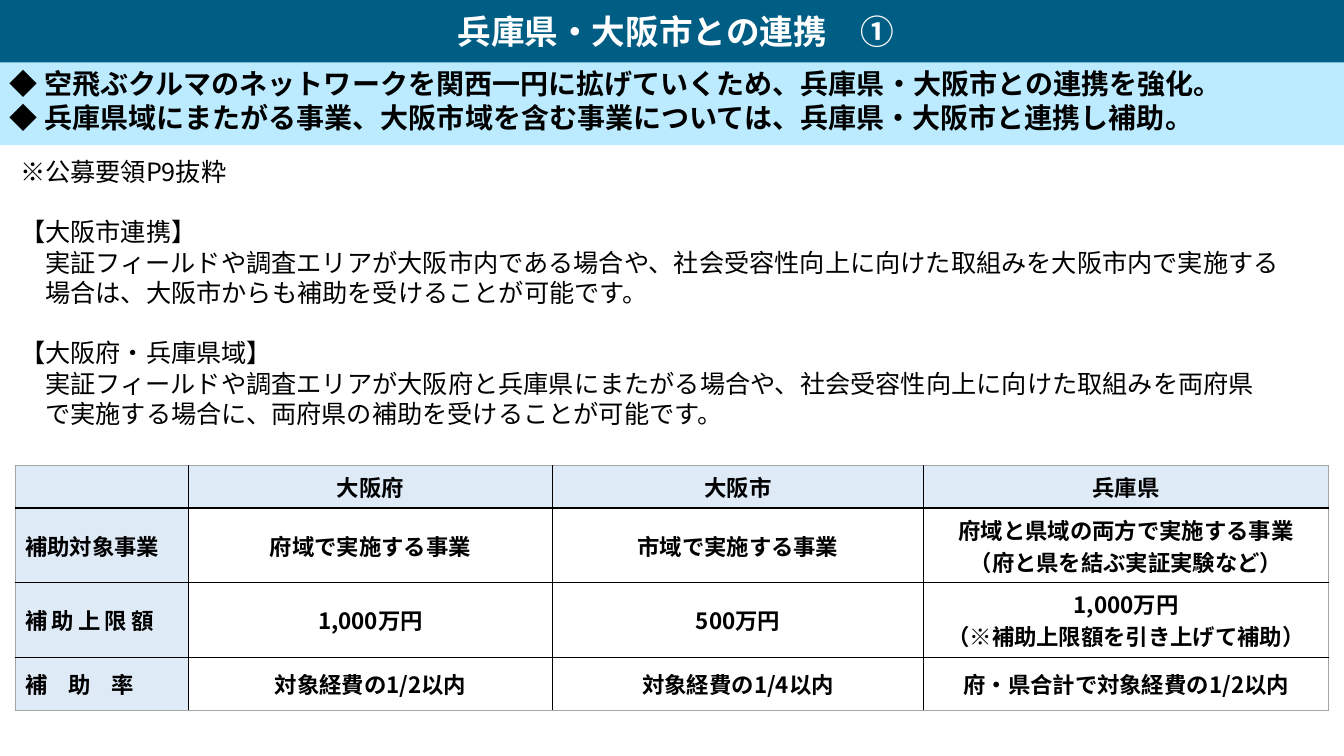
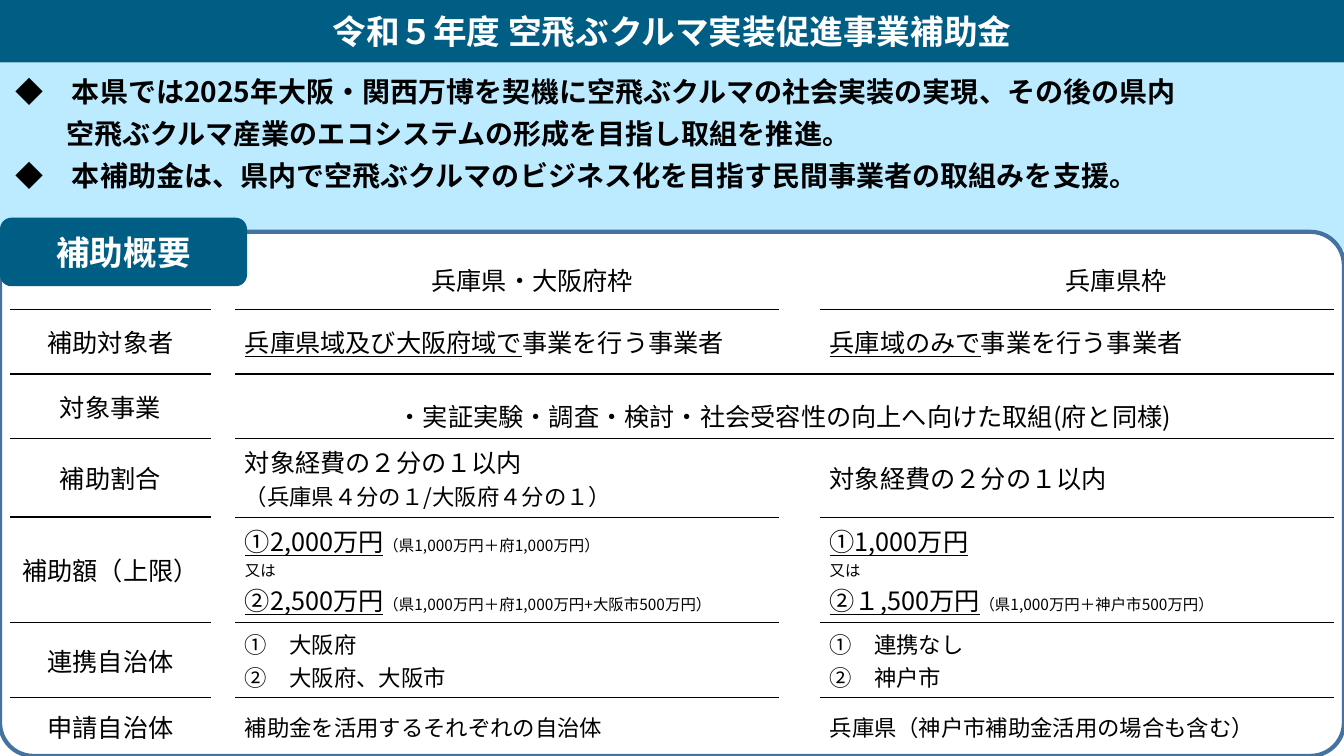
import dataclasses

import lxml.etree
import pptx
import pptx.dml.color
import pptx.enum.shapes
import pptx.enum.text
import pptx.oxml.ns
import pptx.util

Inches = pptx.util.Inches
Pt = pptx.util.Pt
SHAPE = pptx.enum.shapes.MSO_SHAPE
ALIGN = pptx.enum.text.PP_ALIGN
ANCHOR = pptx.enum.text.MSO_ANCHOR
qn = pptx.oxml.ns.qn


@dataclasses.dataclass(frozen=True)
class Theme:
    font: str = "Noto Sans CJK JP"
    navy: str = "005D84"
    sky: str = "BCEBFF"
    pale: str = "DEEBF7"
    frame: str = "43739E"
    edge: str = "A6A6A6"
    black: str = "000000"
    white: str = "FFFFFF"
    title: int = 24
    lead: int = 20
    body: int = 18
    small: int = 16
    note: int = 11
    width: float = 13.33
    height: float = 7.5
    title_height: float = 0.62


T = Theme()
PLAIN_TABLE = "{2D5ABB26-0587-4C30-8999-92F81FD0307C}"


# Text
def rgb(value):
    return pptx.dml.color.RGBColor.from_string(value)


def add_run(paragraph, text, size, color=T.black, bold=False, underline=False, spacing=0):
    run = paragraph.add_run()
    run.text = text
    font = run.font
    font.name, font.size, font.bold = T.font, Pt(size), bold
    font.underline = underline
    font.color.rgb = rgb(color)
    properties = run._r.get_or_add_rPr()
    latin = properties.find(qn("a:latin"))
    east_asian = lxml.etree.Element(qn("a:ea"), typeface=T.font)
    latin.addnext(east_asian)
    if spacing:
        properties.set("spc", str(spacing * 100))


def write(frame, paragraphs, align=ALIGN.LEFT, indents=(), **style):
    """Each paragraph is a list of runs: a string, or a string with style changes."""
    for index, runs in enumerate(paragraphs):
        paragraph = frame.paragraphs[0] if index == 0 else frame.add_paragraph()
        paragraph.alignment = align
        if index < len(indents) and indents[index]:
            paragraph._p.get_or_add_pPr().set("marL", str(Inches(indents[index])))
        for run in runs:
            text, changes = (run, {}) if isinstance(run, str) else run
            add_run(paragraph, text, **{**style, **changes})
    return frame.paragraphs


def set_insets(frame, left, top, right, bottom):
    frame.margin_left, frame.margin_top = Inches(left), Inches(top)
    frame.margin_right, frame.margin_bottom = Inches(right), Inches(bottom)


# Shapes shared by the slides
def add_panel(slide, box, fill, kind=SHAPE.RECTANGLE, line=None):
    panel = slide.shapes.add_shape(kind, *map(Inches, box))
    panel.shadow.inherit = False
    panel.fill.solid()
    panel.fill.fore_color.rgb = rgb(fill)
    if line:
        panel.line.color.rgb, panel.line.width = rgb(line), Pt(3)
    else:
        panel.line.fill.background()
    panel.text_frame.word_wrap = True
    return panel


def add_heading(slide, box, text, kind=SHAPE.RECTANGLE):
    frame = add_panel(slide, box, T.navy, kind).text_frame
    set_insets(frame, 0, 0, 0, 0)
    frame.vertical_anchor = ANCHOR.MIDDLE
    write(frame, [[text]], ALIGN.CENTER, size=T.title, color=T.white, bold=True)


def add_header(slide, title, band_top, band_height, messages, indents=(), top_inset=0.05, gap=0):
    band = add_panel(slide, (0, band_top, T.width, band_height), T.sky).text_frame
    set_insets(band, 0.1, top_inset, 0.1, 0.05)
    band.vertical_anchor = ANCHOR.TOP
    for paragraph in write(band, messages, indents=indents, size=T.lead, bold=True):
        paragraph.space_before = paragraph.space_after = Pt(gap)
    add_heading(slide, (0, 0, T.width, T.title_height), title)


# Tables
def add_grid(slide, left, top, columns, rows):
    box = map(Inches, (left, top, sum(columns), sum(rows)))
    grid = slide.shapes.add_table(len(rows), len(columns), *box).table
    grid.first_row = grid.horz_banding = False
    grid._tbl.tblPr.find(qn("a:tableStyleId")).text = PLAIN_TABLE
    for column, width in zip(grid.columns, columns):
        column.width = Inches(width)
    for row, height in zip(grid.rows, rows):
        row.height = Inches(height)
    return grid


def style_cell(cell, borders, fill=None):
    """borders maps a side, in the order L R T B, to a colour and a width."""
    properties = cell._tc.get_or_add_tcPr()
    for side, (color, width) in borders.items():
        line = lxml.etree.SubElement(properties, qn(f"a:ln{side}"), w=str(Pt(width)))
        solid = lxml.etree.SubElement(line, qn("a:solidFill"))
        lxml.etree.SubElement(solid, qn("a:srgbClr"), val=color)
    if fill:
        cell.fill.solid()
        cell.fill.fore_color.rgb = rgb(fill)
    else:
        cell.fill.background()
    cell.vertical_anchor = ANCHOR.MIDDLE


# Slide 1: cooperation between the governments
def add_guideline(slide, box):
    frame = slide.shapes.add_textbox(*map(Inches, box)).text_frame
    frame.word_wrap = True
    lines = [
        "※公募要領P9抜粋",
        "【大阪市連携】",
        "実証フィールドや調査エリアが大阪市内である場合や、社会受容性向上に向けた取組みを大阪市内で実施する",
        "場合は、大阪市からも補助を受けることが可能です。",
        "【大阪府・兵庫県域】",
        "実証フィールドや調査エリアが大阪府と兵庫県にまたがる場合や、社会受容性向上に向けた取組みを両府県",
        "で実施する場合に、両府県の補助を受けることが可能です。",
    ]
    indents = [0 if line[0] in "※【" else 0.25 for line in lines]
    paragraphs = write(frame, [[line] for line in lines], indents=indents, size=T.body)
    for line, paragraph in zip(lines, paragraphs):
        if line.startswith("【"):
            paragraph.space_before = Pt(21.6)


def add_subsidy_table(slide, left, top):
    rows = [
        [[], [["大阪府"]], [["大阪市"]], [["兵庫県"]]],
        [[["補助対象事業"]], [["府域で実施する事業"]], [["市域で実施する事業"]],
         [["府域と県域の両方で実施する事業"], ["（府と県を結ぶ実証実験など）"]]],
        [[[("補助上限額", {"spacing": 3})]], [["1,000万円"]], [["500万円"]],
         [["1,000万円"], ["（※補助上限額を引き上げて補助）"]]],
        [[[("補助", {"spacing": 15}), "率"]], [["対象経費の1/2以内"]],
         [["対象経費の1/4以内"]], [["府・県合計で対象経費の1/2以内"]]],
    ]
    grid = add_grid(slide, left, top, [1.72, 3.61, 3.68, 4.02], [0.42, 0.74, 0.74, 0.53])
    inner, outer = (T.black, 1), (T.edge, 0.75)
    last_row, last_column = len(rows) - 1, len(rows[0]) - 1
    for r, row in enumerate(rows):
        for c, paragraphs in enumerate(row):
            cell = grid.cell(r, c)
            borders = {
                "L": inner if c else outer,
                "R": inner if c < last_column else outer,
                "T": inner if r else outer,
                "B": inner if r < last_row else outer,
            }
            style_cell(cell, borders, T.white if r and c else T.pale)
            align = ALIGN.CENTER if c else ALIGN.LEFT
            write(cell.text_frame, paragraphs, align, size=T.small, bold=True)


def build_cooperation(slide):
    add_header(slide, " 兵庫県・大阪市との連携　①", 0.61, 0.83, [
        ["◆ 空飛ぶクルマのネットワークを関西一円に拡げていくため、兵庫県・大阪市との連携を強化。"],
        ["◆ 兵庫県域にまたがる事業、大阪市域を含む事業については、兵庫県・大阪市と連携し補助。"],
    ])
    add_subsidy_table(slide, 0.15, 4.62)
    add_guideline(slide, (0.1, 1.5, 12.85, 2.83))


# Slide 2: outline of the subsidy
def add_outline_table(slide, left, top):
    def under(text):
        return text, {"underline": True}

    def small(text):
        return text, {"size": T.small}

    def note(text):
        return text, {"size": T.note}

    # Label, joint quota, prefecture quota
    rows = [
        (None, [["兵庫県・大阪府枠"]], [["兵庫県枠"]]),
        ("補助対象者", [[under("兵庫県域及び大阪府域で"), "事業を行う事業者"]],
         [[under("兵庫域のみで"), "事業を行う事業者"]]),
        ("対象事業", [["・実証実験・調査・検討・社会受容性の向上へ向けた取組(府と同様)"]], None),
        ("補助割合", [["対象経費の２分の１以内"], [small("（兵庫県４分の１/大阪府４分の１）")]],
         [["対象経費の２分の１以内"]]),
        ("補助額（上限）",
         [[under("①2,000万円"), note("（県1,000万円＋府1,000万円）")], [note("又は")],
          [under("②2,500万円"), note("（県1,000万円＋府1,000万円+大阪市500万円）")]],
         [[under("①1,000万円")], [note("又は")],
          [under("②１,500万円"), note("（県1,000万円＋神戸市500万円）")]]),
        ("連携自治体", [[small("①　大阪府")], [small("②　大阪府、大阪市")]],
         [[small("①　連携なし")], [small("②　神戸市")]]),
        ("申請自治体", [[small("補助金を活用するそれぞれの自治体")]],
         [[small("兵庫県（神戸市補助金活用の場合も含む）")]]),
    ]
    heights = [0.6, 0.64, 0.64, 0.78, 1.05, 0.74, 0.58]
    grid = add_grid(slide, left, top, [1.99, 0.23, 5.4, 0.4, 5.1], heights)
    header_indents = {2: 0.5, 4: 0.78}
    for r, (label, joint, prefecture) in enumerate(rows):
        shared = prefecture is None
        if shared:
            grid.cell(r, 2).merge(grid.cell(r, 4))
        contents = {0: [[label]] if label else [], 2: joint, 4: prefecture}
        for c in range(5):
            cell = grid.cell(r, c)
            if cell.is_spanned:
                continue
            borders = {}
            if c in contents:
                if r > 0:
                    borders["T"] = (T.black, 1 if c == 0 or r < 3 else 0.75)
                if r < len(rows) - 1:
                    borders["B"] = (T.black, 1 if c == 0 or r < 2 else 0.75)
            style_cell(cell, borders)
            centred = c == 0 or r == 0 or shared
            indents = [header_indents.get(c, 0)] if r == 0 else []
            paragraphs = write(cell.text_frame, contents.get(c, []),
                               ALIGN.CENTER if centred else ALIGN.LEFT, indents, size=T.body)
            if shared and c == 2:
                paragraphs[0].line_spacing = 1.5


def build_outline(slide):
    add_header(slide, "令和５年度 空飛ぶクルマ実装促進事業補助金", T.title_height, 1.86, [
        ["◆　本県では2025年大阪・関西万博を契機に空飛ぶクルマの社会実装の実現、その後の県内"],
        ["空飛ぶクルマ産業のエコシステムの形成を目指し取組を推進", ("。", {"spacing": 2})],
        ["◆　本補助金は、県内で空飛ぶクルマのビジネス化を目指す民間事業者の取組みを支援。"],
    ], indents=[0.06, 0.56, 0.06], top_inset=0.12, gap=3)
    frame = add_panel(slide, (0, 2.3, T.width, 5.2), T.white, SHAPE.ROUNDED_RECTANGLE, T.frame)
    frame.adjustments[0] = 0.064
    add_outline_table(slide, 0.1, 2.47)
    add_heading(slide, (0, 2.16, 2.45, 0.68), "補助概要", SHAPE.ROUNDED_RECTANGLE)


def main():
    deck = pptx.Presentation()
    deck.slide_width, deck.slide_height = Inches(T.width), Inches(T.height)
    for build in (build_cooperation, build_outline):
        build(deck.slides.add_slide(deck.slide_layouts[6]))
    deck.save("out.pptx")


if __name__ == "__main__":
    main()
